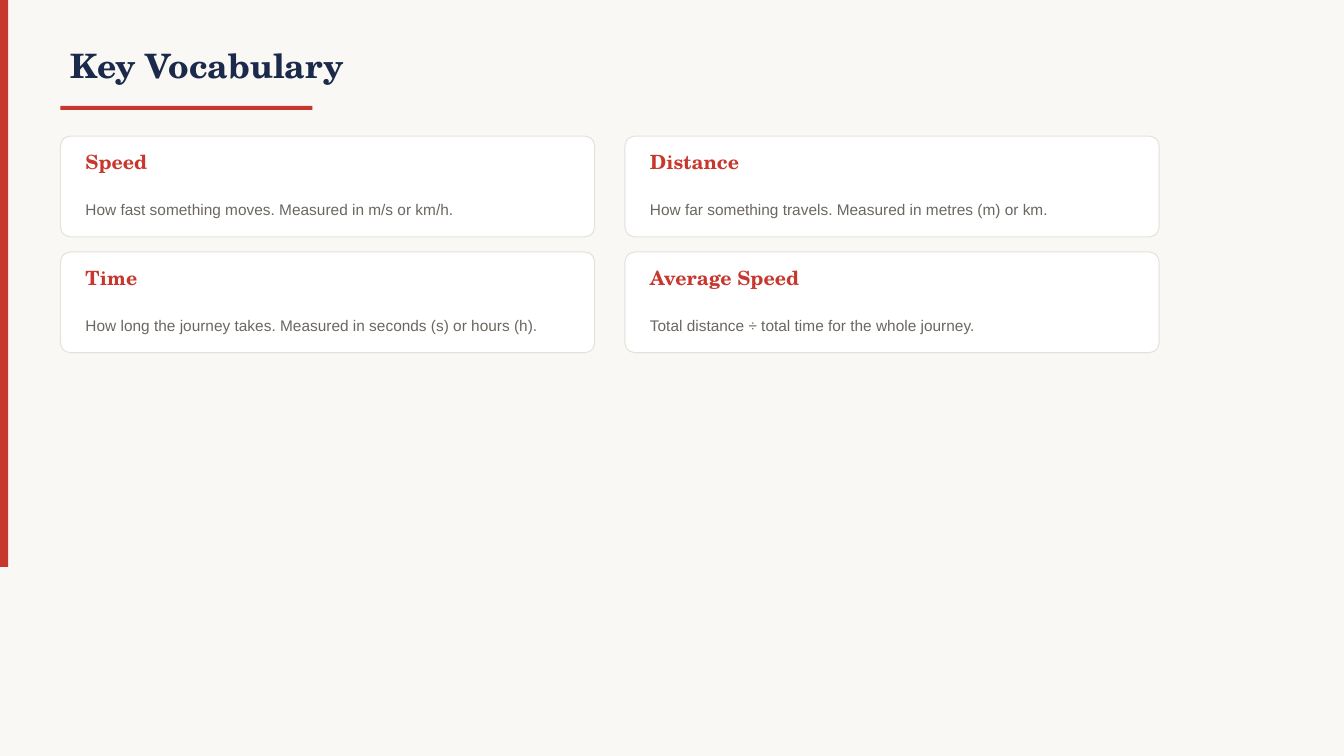
from dataclasses import dataclass

from pptx import Presentation
from pptx.dml.color import RGBColor
from pptx.enum.shapes import MSO_SHAPE
from pptx.enum.text import MSO_ANCHOR
from pptx.slide import Slide
from pptx.util import Pt

PAPER, WHITE, BORDER = "FAF8F5", "FFFFFF", "E5E2DC"
RED, NAVY, GREY = "C8372D", "1B2A4A", "6B6660"
SERIF, SANS = "TeX Gyre Schola", "Arial"

# Card grid, in points
LEFT, TOP = 43.2, 97.2
CARD_W, CARD_H = 381.6, 72
GAP_X, GAP_Y = 21.6, 10.8
COLUMNS = 2


@dataclass
class Term:
    name: str
    meaning: str


@dataclass
class Style:
    font: str
    size: float
    color: str
    bold: bool = False
    spacing: float = 1.0


TITLE = Style(SERIF, 24, NAVY, bold=True)
TERM = Style(SERIF, 14, RED, bold=True)
MEANING = Style(SANS, 11, GREY, spacing=1.3)

TERMS = [
    Term("Speed", "How fast something moves. Measured in m/s or km/h."),
    Term("Distance", "How far something travels. Measured in metres (m) or km."),
    Term("Time", "How long the journey takes. Measured in seconds (s) or hours (h)."),
    Term("Average Speed", "Total distance ÷ total time for the whole journey."),
]


def rgb(value: str) -> RGBColor:
    return RGBColor.from_string(value)


def add_block(s: Slide, x: float, y: float, w: float, h: float, fill: str,
              line: str = "", rounding: float = 0) -> None:
    kind = MSO_SHAPE.ROUNDED_RECTANGLE if rounding else MSO_SHAPE.RECTANGLE
    sp = s.shapes.add_shape(kind, Pt(x), Pt(y), Pt(w), Pt(h))
    sp.shadow.inherit = False
    sp.fill.solid()
    sp.fill.fore_color.rgb = rgb(fill)
    if rounding:
        sp.adjustments[0] = rounding
    if line:
        sp.line.color.rgb = rgb(line)
        sp.line.width = Pt(0.75)
    else:
        sp.line.fill.background()


def add_text(s: Slide, x: float, y: float, w: float, h: float,
             text: str, style: Style) -> None:
    tf = s.shapes.add_textbox(Pt(x), Pt(y), Pt(w), Pt(h)).text_frame
    tf.word_wrap = True
    tf.vertical_anchor = MSO_ANCHOR.MIDDLE
    p = tf.paragraphs[0]
    if style.spacing != 1:
        p.line_spacing = style.spacing
    r = p.add_run()
    r.text = text
    r.font.name = style.font
    r.font.size = Pt(style.size)
    r.font.bold = style.bold
    r.font.color.rgb = rgb(style.color)


def add_card(s: Slide, x: float, y: float, term: Term) -> None:
    add_block(s, x, y, CARD_W, CARD_H, WHITE, line=BORDER, rounding=0.1)
    add_text(s, x + 10.8, y + 5.76, 360, 25.2, term.name, TERM)
    add_text(s, x + 10.8, y + 32.4, 360, 36, term.meaning, MEANING)


def main() -> None:
    prs = Presentation()
    prs.slide_width, prs.slide_height = Pt(960), Pt(540)
    s = prs.slides.add_slide(prs.slide_layouts[6])
    s.background.fill.solid()
    s.background.fill.fore_color.rgb = rgb(PAPER)

    # Side bar, title and underline
    add_block(s, 0, 0, 5.76, 405, RED)
    add_text(s, LEFT, 21.6, 720, 50.4, "Key Vocabulary", TITLE)
    add_block(s, LEFT, 75.6, 180, 2.88, RED)

    # Vocabulary cards
    for i, term in enumerate(TERMS):
        row, col = divmod(i, COLUMNS)
        add_card(s, LEFT + col * (CARD_W + GAP_X), TOP + row * (CARD_H + GAP_Y), term)

    prs.save("out.pptx")


if __name__ == "__main__":
    main()
